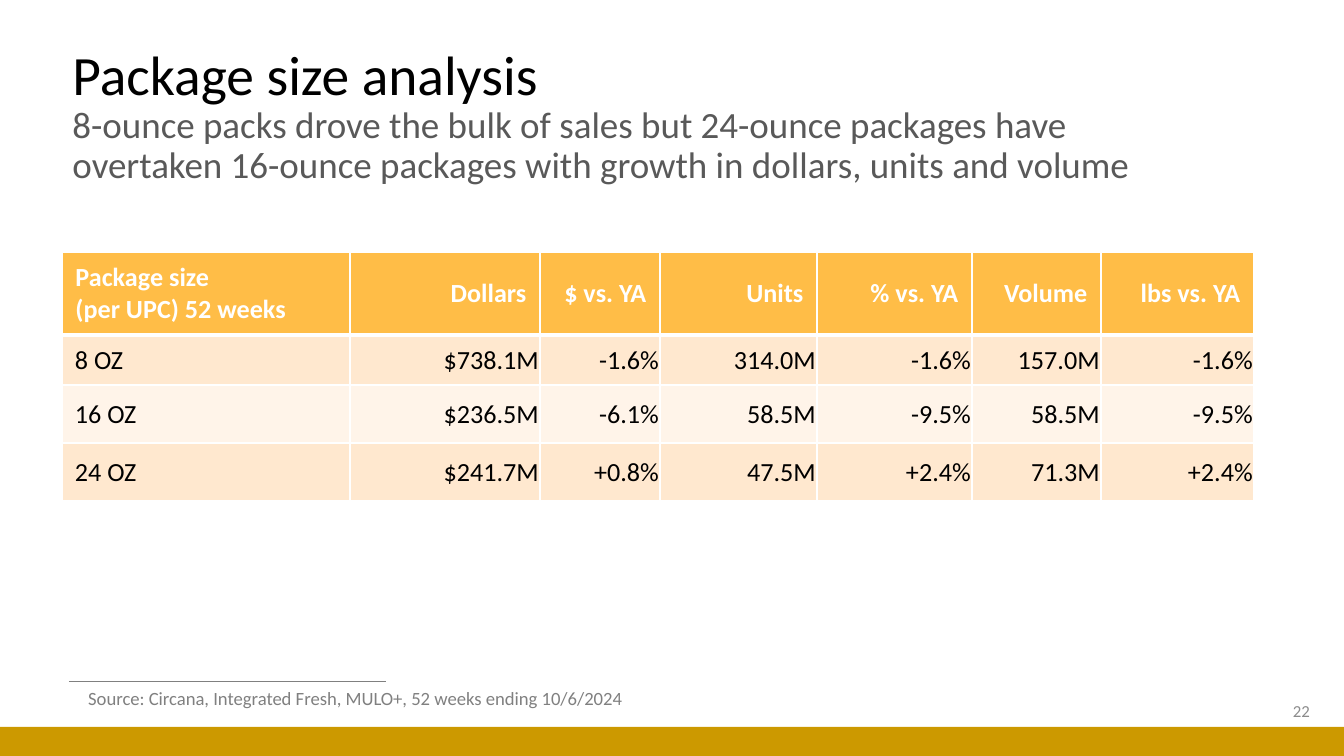
from lxml.etree import SubElement
from pptx import Presentation
from pptx.dml.color import RGBColor
from pptx.enum.shapes import MSO_CONNECTOR, MSO_SHAPE
from pptx.enum.text import MSO_ANCHOR, MSO_AUTO_SIZE, PP_ALIGN
from pptx.oxml import parse_xml
from pptx.oxml.ns import nsdecls, qn
from pptx.util import Emu, Pt


def px(length):
    return Emu(round(length * 914400 / 134.4))


def style(font, size, color, bold=False):
    font.name = "Calibri"
    font.size = Pt(size)
    font.bold = bold
    font.color.rgb = RGBColor.from_string(color)


deck = Presentation()
deck.slide_width = px(1344)
deck.slide_height = px(756)
page = deck.slides.add_slide(deck.slide_layouts[5])

rule = page.shapes.add_connector(MSO_CONNECTOR.STRAIGHT, px(69), px(682), px(386), px(682))
rule.line.color.rgb = RGBColor.from_string("808080")
rule.line.width = Pt(0.5)
SubElement(rule._element.spPr, qn("a:effectLst"))

footer_band = page.shapes.add_shape(MSO_SHAPE.RECTANGLE, px(0), px(727), px(1344), px(29))
footer_band.shadow.inherit = False
footer_band.fill.solid()
footer_band.fill.fore_color.rgb = RGBColor.from_string("CC9900")
footer_band.line.fill.background()

title = page.shapes.title
title.left, title.top, title.width, title.height = px(59), px(46), px(1146), px(142)
title.text_frame.auto_size = MSO_AUTO_SIZE.NONE
title.text_frame.word_wrap = True
title.text_frame.vertical_anchor = MSO_ANCHOR.MIDDLE
para = title.text_frame.paragraphs[0]
para.alignment = PP_ALIGN.LEFT
para.line_spacing = 0.9
span = para.add_run()
span.text = "Package size analysis"
style(span.font, 29.7, "000000")
para.add_line_break()
span = para.add_run()
span.text = (
    "8-ounce packs drove the bulk of sales but 24-ounce packages have "
    "overtaken 16-ounce packages with growth in dollars, units and volume"
)
style(span.font, 19.8, "595959")

notes = [
    ("22", 1021, 691, 302, 40, 9, "8C8C8C", PP_ALIGN.RIGHT, MSO_ANCHOR.MIDDLE, True),
    ("Source: Circana, Integrated Fresh, MULO+, 52 weeks ending 10/6/2024",
     75, 680, 573, 36, 10, "808080", PP_ALIGN.LEFT, MSO_ANCHOR.TOP, False),
]
for text, left, top, width, height, size, color, alignment, anchor, wrap in notes:
    box = page.shapes.add_textbox(px(left), px(top), px(width), px(height))
    box.text_frame.word_wrap = wrap
    box.text_frame.vertical_anchor = anchor
    para = box.text_frame.paragraphs[0]
    para.text = text
    para.alignment = alignment
    style(para.font, size, color)

rows = [
    ["Package size\v(per UPC) 52 weeks", "Dollars", "$ vs. YA", "Units", "% vs. YA", "Volume", "lbs vs. YA"],
    ["8 OZ", "$738.1M", "-1.6%", "314.0M", "-1.6%", "157.0M", "-1.6%"],
    ["16 OZ", "$236.5M", "-6.1%", "58.5M", "-9.5%", "58.5M", "-9.5%"],
    ["24 OZ", "$241.7M", "+0.8%", "47.5M", "+2.4%", "71.3M", "+2.4%"],
]
column_widths = [288, 190, 120, 157, 155, 129, 153]
row_heights = [83, 50, 58, 58]
row_fills = ["FFBD47", "FFE8CF", "FFF4E9", "FFE8CF"]

table = page.shapes.add_table(
    len(rows), len(column_widths), px(62), px(252), px(sum(column_widths)), px(sum(row_heights))
).table
table.first_row = False
table.horz_banding = False
for column, width in zip(table.columns, column_widths):
    column.width = px(width)
for row, height in zip(table.rows, row_heights):
    row.height = px(height)

for row_index, texts in enumerate(rows):
    header = row_index == 0
    for column_index, text in enumerate(texts):
        cell = table.cell(row_index, column_index)
        cell.vertical_anchor = MSO_ANCHOR.MIDDLE
        if not header:
            cell.margin_left = cell.margin_right = px(13 if column_index == 0 else 1)
            cell.margin_top, cell.margin_bottom = px(1), px(0)
        for side in ("L", "R", "T", "B"):
            thick = (header and side == "B") or (row_index == 1 and side == "T")
            cell._tc.get_or_add_tcPr().append(parse_xml(
                f'<a:ln{side} {nsdecls("a")} w="{Pt(3 if thick else 1)}">'
                f'<a:solidFill><a:srgbClr val="FFFFFF"/></a:solidFill></a:ln{side}>'
            ))
        cell.fill.solid()
        cell.fill.fore_color.rgb = RGBColor.from_string(row_fills[row_index])
        para = cell.text_frame.paragraphs[0]
        para.text = text
        para.alignment = PP_ALIGN.LEFT if column_index == 0 else PP_ALIGN.RIGHT
        style(para.font, 14, "FFFFFF" if header else "000000", header)

deck.save("out.pptx")
